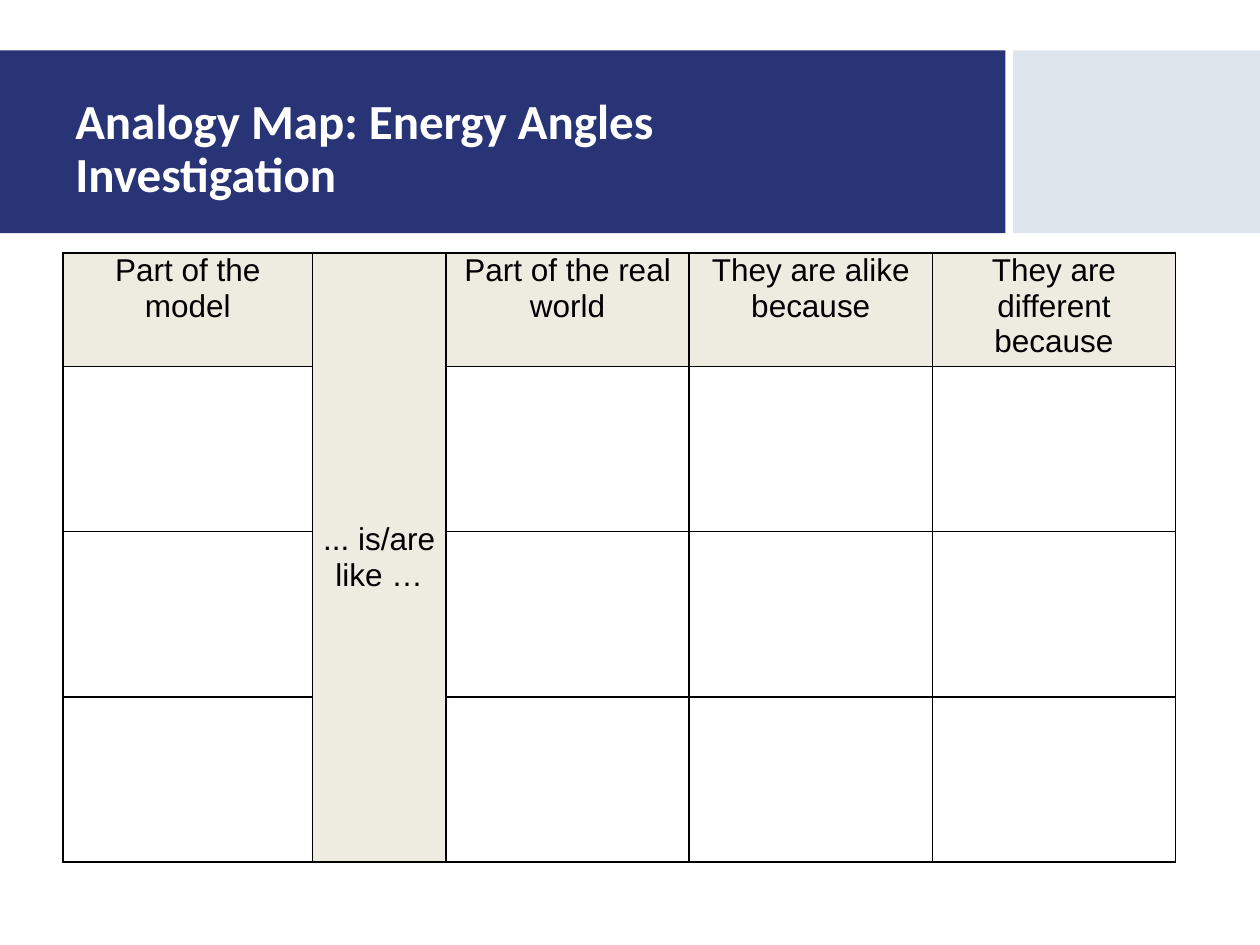
from dataclasses import dataclass

import pptx
import pptx.dml.color
import pptx.enum.shapes
import pptx.enum.text
import pptx.oxml
import pptx.oxml.ns
import pptx.util
from pptx.util import Inches

COLOURS = {"navy": "293476", "mist": "DFE5ED", "sand": "EEECE1",
           "white": "FFFFFF", "black": "000000"}
ALIGN = pptx.enum.text.PP_ALIGN
ANCHOR = pptx.enum.text.MSO_ANCHOR
SLIDE_WIDTH, SLIDE_HEIGHT = 10, 7.5
BAND_TOP, BAND_HEIGHT = 0.4, 1.45
COLUMN_WIDTHS = [1.98, 1.06, 1.93, 1.93, 1.93]
ROW_HEIGHTS = [0.9] + [1.31] * 3
LINK_COLUMN = 1


@dataclass
class Band:
    left: float
    width: float
    colour: str


@dataclass
class Heading:
    text: str
    anchor: ANCHOR = ANCHOR.TOP


BANDS = [Band(0, 7.98, "navy"), Band(8.04, 1.96, "mist")]
HEADINGS = [
    Heading("Part of the model"),
    Heading("... is/are like …", ANCHOR.MIDDLE),
    Heading("Part of the real world"),
    Heading("They are alike because"),
    Heading("They are different because"),
]


def rgb(name: str) -> pptx.dml.color.RGBColor:
    return pptx.dml.color.RGBColor.from_string(COLOURS[name])


def write_text(frame, text: str, *, size: float, font: str, colour: str,
               bold: bool = False, align=ALIGN.LEFT, line_spacing: float = 1.0) -> None:
    paragraph = frame.paragraphs[0]
    paragraph.alignment = align
    paragraph.line_spacing = line_spacing
    run = paragraph.add_run()
    run.text = text
    run.font.size = pptx.util.Pt(size)
    run.font.name = font
    run.font.bold = bold
    run.font.color.rgb = rgb(colour)


def draw_band(slide, band: Band) -> None:
    shape = slide.shapes.add_shape(
        pptx.enum.shapes.MSO_SHAPE.RECTANGLE, Inches(band.left), Inches(BAND_TOP),
        Inches(band.width), Inches(BAND_HEIGHT))
    shape.shadow.inherit = False
    shape.fill.solid()
    shape.fill.fore_color.rgb = rgb(band.colour)
    shape.line.fill.background()


def draw_title(slide, text: str) -> None:
    box = slide.shapes.add_textbox(Inches(0.5), Inches(0.58), Inches(6.93), Inches(1.22))
    frame = box.text_frame
    frame.word_wrap = True
    frame.vertical_anchor = ANCHOR.MIDDLE
    write_text(frame, text, size=28, font="Calibri", colour="white", bold=True,
               line_spacing=0.9)


def set_borders(cell, colour: str, points: float) -> None:
    """Put the four border lines ahead of the fill, as the schema requires."""
    properties = cell._tc.get_or_add_tcPr()
    for position, side in enumerate(("lnL", "lnR", "lnT", "lnB")):
        properties.insert(position, pptx.oxml.parse_xml(
            f'<a:{side} {pptx.oxml.ns.nsdecls("a")} w="{pptx.util.Pt(points)}">'
            f'<a:solidFill><a:srgbClr val="{COLOURS[colour]}"/></a:solidFill></a:{side}>'))


def draw_analogy_table(slide) -> None:
    table = slide.shapes.add_table(
        len(ROW_HEIGHTS), len(COLUMN_WIDTHS), Inches(0.5), Inches(2.01),
        Inches(sum(COLUMN_WIDTHS)), Inches(sum(ROW_HEIGHTS))).table
    table.first_row = table.horz_banding = False
    for column, width in zip(table.columns, COLUMN_WIDTHS):
        column.width = Inches(width)
    for row, height in zip(table.rows, ROW_HEIGHTS):
        row.height = Inches(height)
    table.cell(0, LINK_COLUMN).merge(table.cell(len(ROW_HEIGHTS) - 1, LINK_COLUMN))

    for cell in table.iter_cells():
        cell.margin_left = cell.margin_right = Inches(0.07)
        cell.margin_top = cell.margin_bottom = 0
        cell.fill.background()
        set_borders(cell, "black", 1)
    for column, heading in enumerate(HEADINGS):
        cell = table.cell(0, column)
        cell.fill.solid()
        cell.fill.fore_color.rgb = rgb("sand")
        cell.vertical_anchor = heading.anchor
        write_text(cell.text_frame, heading.text, size=18, font="Arial",
                   colour="black", align=ALIGN.CENTER)


def main() -> None:
    presentation = pptx.Presentation()
    presentation.slide_width = Inches(SLIDE_WIDTH)
    presentation.slide_height = Inches(SLIDE_HEIGHT)
    slide = presentation.slides.add_slide(presentation.slide_layouts[6])
    for band in BANDS:
        draw_band(slide, band)
    draw_title(slide, "Analogy Map: Energy Angles Investigation")
    draw_analogy_table(slide)
    presentation.save("out.pptx")


if __name__ == "__main__":
    main()
